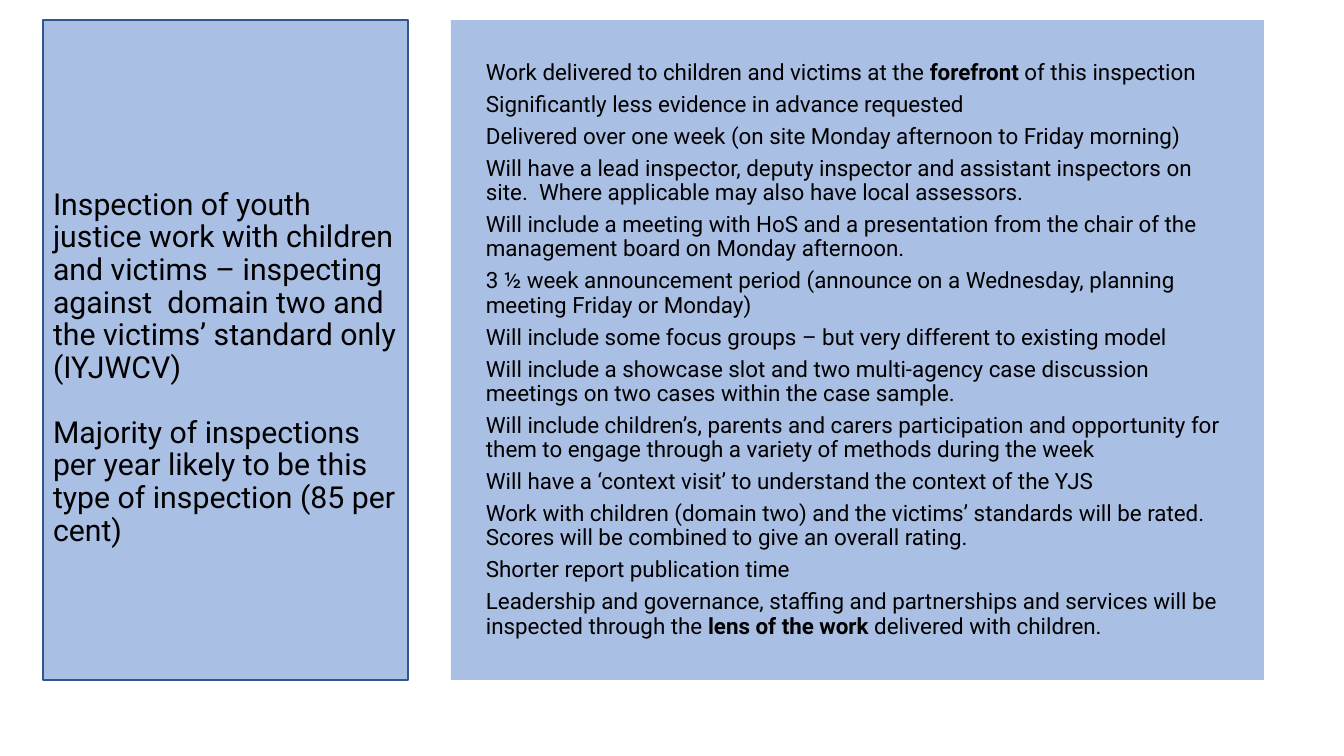
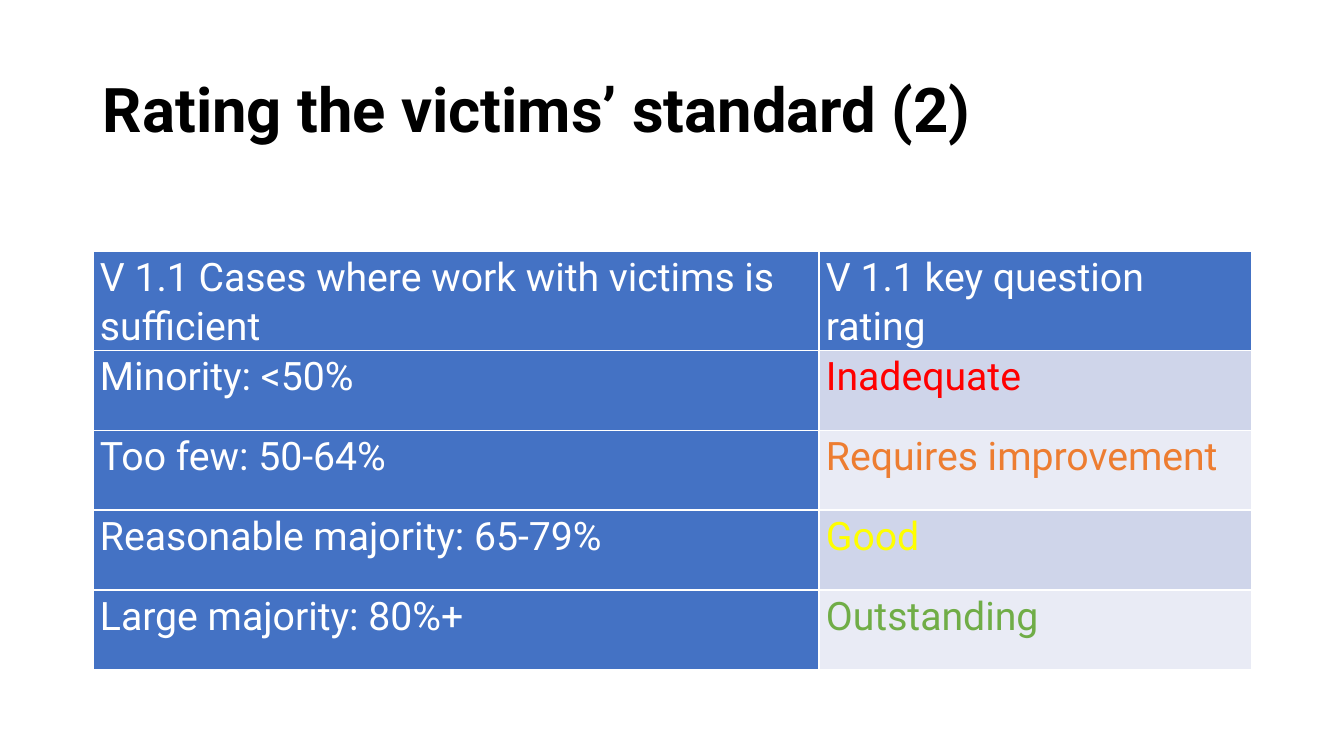
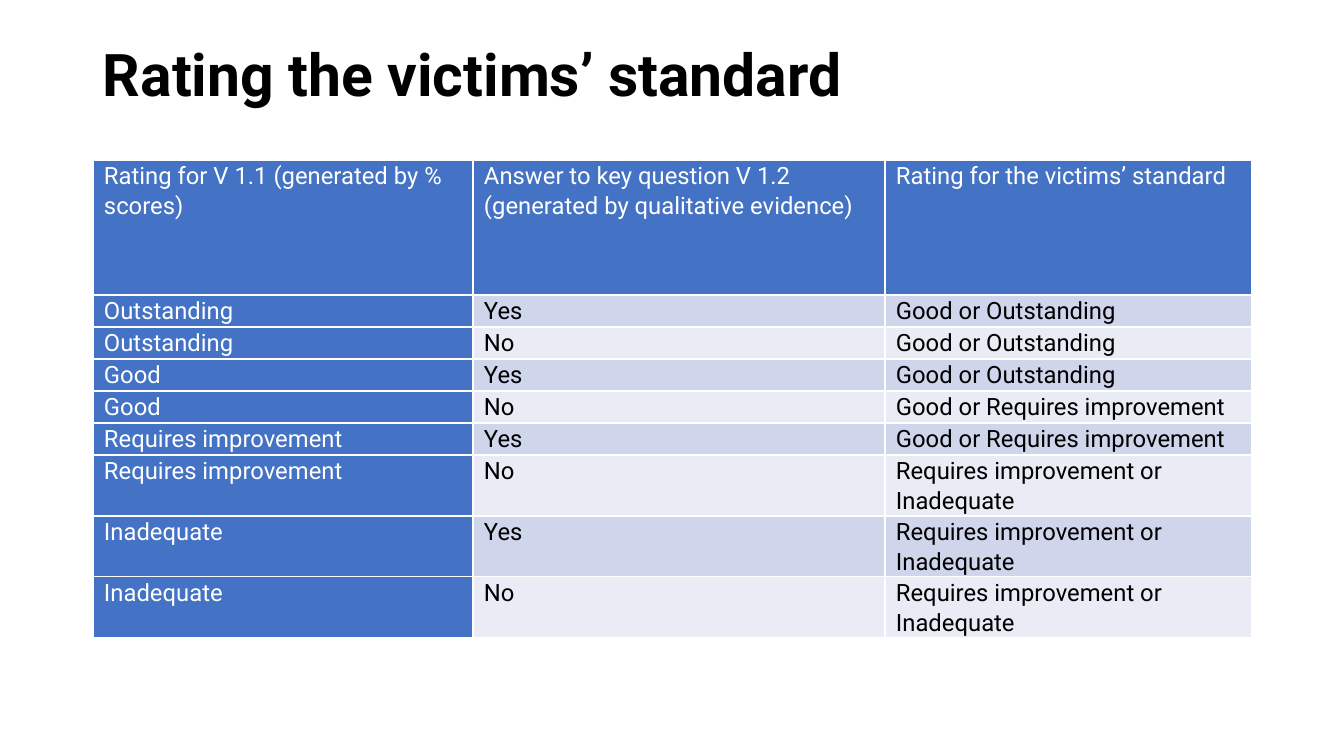
from lxml import etree
from pptx import Presentation
from pptx import util as u
from pptx.dml.color import RGBColor
from pptx.enum import shapes, text
from pptx.oxml.ns import qn

PX = 914400 / 100.8
FONT = "Roboto"
COLORS = {
    "panel": "AABFE4", "outline": "325491", "header": "4472C4",
    "band_dark": "CFD5EA", "band_light": "E9EBF5",
    "black": "000000", "white": "FFFFFF", "red": "FF0000",
    "orange": "ED7D31", "yellow": "FFFF00", "green": "70AD47",
}
RATING_COLORS = {
    "Inadequate": "red", "Requires improvement": "orange",
    "Good": "yellow", "Outstanding": "green",
}
LEFT, WIDTH = 93, 1159


def px(*lengths):
    return [u.Emu(round(n * PX)) for n in lengths]


def rgb(name):
    return RGBColor.from_string(COLORS[name])


prs = Presentation()
prs.slide_width, prs.slide_height = px(1344, 756)

# Slides and titles
slides = []
titles = [
    # paragraphs, box, size, bold, anchor, insets (left, top, right, bottom)
    (["Inspection of youth justice work with children and victims – inspecting "
      "against  domain two and the victims’ standard only (IYJWCV)",
      "Majority of inspections per year likely to be this type of inspection "
      "(85 per cent)"],
     (43, 20, 365, 660), 21.6, False, text.MSO_ANCHOR.TOP, (10, 169, 6, 5)),
    (["Rating the victims’ standard (2)"],
     (LEFT, 40, WIDTH, 146), 44, True, text.MSO_ANCHOR.MIDDLE, (10, 5, 10, 5)),
    (["Rating the victims’ standard"],
     (LEFT, 40, WIDTH, 75), 42, True, text.MSO_ANCHOR.MIDDLE, (10, 5, 10, 5)),
]
for lines, box, size, bold, anchor, insets in titles:
    s = prs.slides.add_slide(prs.slide_layouts[5])
    slides.append(s)
    title = s.shapes.title
    title.left, title.top, title.width, title.height = px(*box)
    tf = title.text_frame
    tf.text = "\n".join(lines)
    tf.word_wrap = True
    tf.auto_size = text.MSO_AUTO_SIZE.NONE
    tf.vertical_anchor = anchor
    tf.margin_left, tf.margin_top, tf.margin_right, tf.margin_bottom = px(*insets)
    for i, p in enumerate(tf.paragraphs):
        p.alignment = text.PP_ALIGN.LEFT
        p.line_spacing = 0.9
        p.space_before = u.Pt(23 if i else 0)
        p.font.name, p.font.size, p.font.bold = FONT, u.Pt(size), bold
        p.font.color.rgb = rgb("black")

# Slide 1: title panel and list panel
title = slides[0].shapes.title
title.fill.solid()
title.fill.fore_color.rgb = rgb("panel")
title.line.color.rgb = rgb("outline")
title.line.width = u.Pt(1)

# Every second part between ** marks is bold
features = [
    "Work delivered to children and victims at the **forefront** of this inspection",
    "Significantly less evidence in advance requested",
    "Delivered over one week (on site Monday afternoon to Friday morning)",
    "Will have a lead inspector, deputy inspector and assistant inspectors on site.  "
    "Where applicable may also have local assessors.",
    "Will include a meeting with HoS and a presentation from the chair of the "
    "management board on Monday afternoon.",
    "3 ½ week announcement period (announce on a Wednesday, planning meeting "
    "Friday or Monday)",
    "Will include some focus groups – but very different to existing model",
    "Will include a showcase slot and two multi-agency case discussion meetings "
    "on two cases within the case sample.",
    "Will include children’s, parents and carers participation and opportunity for "
    "them to engage through a variety of methods during the week",
    "Will have a ‘context visit’ to understand the context of the YJS",
    "Work with children (domain two) and the victims’ standards will be rated.  "
    "Scores will be combined to give an overall rating.",
    "Shorter report publication time",
    "Leadership and governance, staffing and partnerships and services will be "
    "inspected through the **lens of the work** delivered with children.",
]
sp = slides[0].shapes.add_shape(shapes.MSO_SHAPE.RECTANGLE, *px(451, 20, 813, 660))
sp.shadow.inherit = False
sp.fill.solid()
sp.fill.fore_color.rgb = rgb("panel")
sp.line.fill.background()
tf = sp.text_frame
tf.word_wrap = True
tf.vertical_anchor = text.MSO_ANCHOR.MIDDLE
tf.margin_left, tf.margin_top, tf.margin_right, tf.margin_bottom = px(35, 36, 35, 36)
for i, feature in enumerate(features):
    p = tf.add_paragraph() if i else tf.paragraphs[0]
    p.alignment = text.PP_ALIGN.LEFT
    p.line_spacing = 0.9
    p.space_after = u.Pt(5.6)
    p.font.name, p.font.size = FONT, u.Pt(16)
    p.font.color.rgb = rgb("black")
    for j, part in enumerate(feature.split("**")):
        r = p.add_run()
        r.text = part
        if j % 2:
            r.font.bold = True

# Slides 2 and 3: rating tables
case_rows = [
    ("V 1.1 Cases where work with victims is sufficient", "V 1.1 key question rating"),
    ("Minority: <50%", "Inadequate"),
    ("Too few: 50-64%", "Requires improvement"),
    ("Reasonable majority: 65-79%", "Good"),
    ("Large majority: 80%+", "Outstanding"),
]
standard_rows = [
    ("Rating for V 1.1 (generated by % scores)",
     "Answer to key question V 1.2 (generated by qualitative evidence)",
     "Rating for the victims’ standard"),
    ("Outstanding", "Yes", "Good or Outstanding"),
    ("Outstanding", "No", "Good or Outstanding"),
    ("Good", "Yes", "Good or Outstanding"),
    ("Good", "No", "Good or Requires improvement"),
    ("Requires improvement", "Yes", "Good or Requires improvement"),
    ("Requires improvement", "No", "Requires improvement or Inadequate"),
    ("Inadequate", "Yes", "Requires improvement or Inadequate"),
    ("Inadequate", "No", "Requires improvement or Inadequate"),
]
tables = [
    # slide, rows, top, column widths, row heights, size, side inset, top inset
    (slides[1], case_rows, 251, [726, 433], [99] + [80] * 4, 28, 7, 1),
    (slides[2], standard_rows, 160, [380, 412, 367],
     [135] + [32] * 5 + [61] * 3, 17, 11, 0),
]
for s, rows, top, widths, heights, size, side, inset_top in tables:
    table = s.shapes.add_table(
        len(rows), len(widths), *px(LEFT, top, sum(widths), sum(heights))).table
    for column, width in zip(table.columns, px(*widths)):
        column.width = width
    for row, height in zip(table.rows, px(*heights)):
        row.height = height
    for i, row in enumerate(rows):
        for j, value in enumerate(row):
            cell = table.cell(i, j)
            tcPr = cell._tc.get_or_add_tcPr()
            for edge in ("lnL", "lnR", "lnT", "lnB"):
                ln = etree.SubElement(tcPr, qn("a:" + edge), w=str(u.Pt(1)))
                fill = etree.SubElement(ln, qn("a:solidFill"))
                etree.SubElement(fill, qn("a:srgbClr"), val=COLORS["white"])
            if i == 0 or j == 0:
                background, color = "header", "white"
            else:
                background = "band_dark" if i % 2 else "band_light"
                color = RATING_COLORS[value] if rows is case_rows else "black"
            cell.fill.solid()
            cell.fill.fore_color.rgb = rgb(background)
            cell.margin_left, cell.margin_right = px(side, side)
            cell.margin_top, cell.margin_bottom = px(inset_top, 0)
            cell.text = value
            p = cell.text_frame.paragraphs[0]
            p.line_spacing = 1.07
            p.font.name, p.font.size, p.font.bold = FONT, u.Pt(size), False
            p.font.color.rgb = rgb(color)

prs.save("out.pptx")
